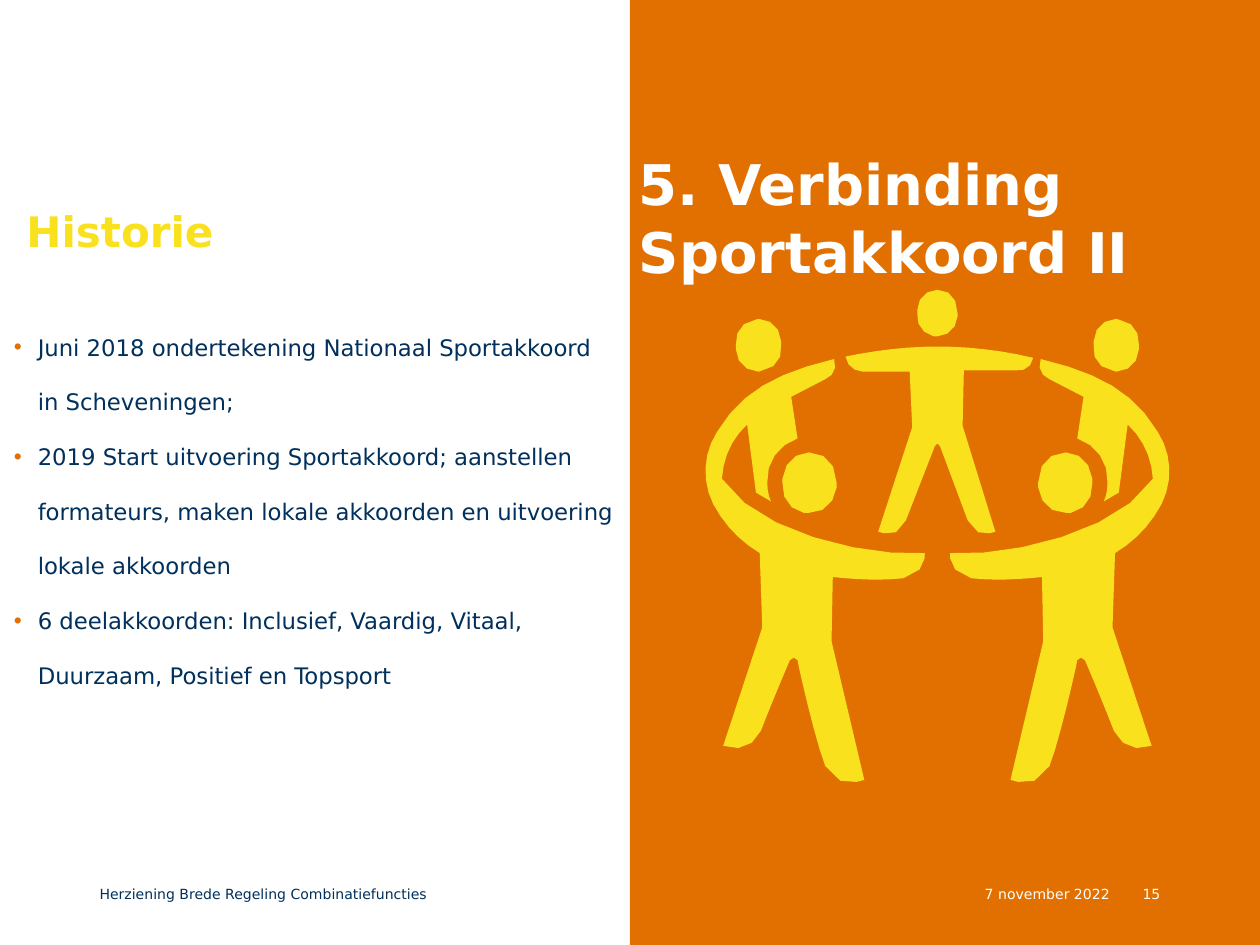
import math

from lxml import etree
from pptx import Presentation
from pptx.dml.color import RGBColor
from pptx.enum import shapes, text
from pptx.oxml.ns import qn
from pptx.util import Inches, Pt

FONT = "DejaVu Sans"
ORANGE, YELLOW, NAVY, WHITE = "E17000", "F9E11E", "00305B", "FFFFFF"
LEFT, RIGHT = text.PP_ALIGN.LEFT, text.PP_ALIGN.RIGHT

TITLE = "Historie"
HEADING = "5. Verbinding Sportakkoord II"
BULLETS = [
    "Juni 2018 ondertekening Nationaal Sportakkoord in Scheveningen;",
    "2019 Start uitvoering Sportakkoord; aanstellen formateurs, maken lokale "
    "akkoorden en uitvoering lokale akkoorden",
    "6 deelakkoorden: Inclusief, Vaardig, Vitaal, Duurzaam, Positief en Topsport",
]
FOOTERS = [  # text, left, width, colour, alignment
    ("Herziening Brede Regeling Combinatiefuncties", 0.79, 4.13, NAVY, LEFT),
    ("7 november 2022", 7.24, 1.57, WHITE, RIGHT),
    ("15", 8.82, 0.39, WHITE, RIGHT),
]

# Outlines in inches: a pair is a line end, six numbers are a Bézier curve
AXIS = 7.44
CENTRE_FIGURE = [
    [  # head
        (7.44, 2.67), (7.52, 2.67, 7.6, 2.6, 7.6, 2.51), (7.6, 2.49),
        (7.6, 2.37, 7.54, 2.3, 7.44, 2.3), (7.35, 2.3, 7.28, 2.37, 7.28, 2.46),
        (7.28, 2.49), (7.27, 2.57, 7.32, 2.65, 7.41, 2.67),
    ],
    [  # body
        (7.9, 4.22), (7.64, 3.38), (7.65, 2.94), (8.06, 2.94),
        (8.13, 2.95, 8.19, 2.91, 8.2, 2.84),
        (7.95, 2.78, 7.69, 2.75, 7.44, 2.75), (7.2, 2.75, 6.95, 2.78, 6.71, 2.83),
        (6.72, 2.9, 6.78, 2.95, 6.85, 2.95), (7.22, 2.95),
        (7.24, 3.39), (6.97, 4.22), (6.97, 4.22, 7.14, 4.29, 7.19, 4.13),
        (7.42, 3.54), (7.44, 3.52), (7.46, 3.54), (7.68, 4.13),
        (7.74, 4.29, 7.9, 4.22, 7.9, 4.22),
    ],
]
LEFT_FIGURES = [
    [  # front head
        (6.42, 3.59), (6.31, 3.59, 6.22, 3.68, 6.21, 3.8), (6.21, 3.83),
        (6.2, 3.95, 6.27, 4.05, 6.38, 4.07), (6.42, 4.07),
        (6.54, 4.08, 6.63, 3.98, 6.64, 3.87), (6.64, 3.83),
        (6.64, 3.68, 6.55, 3.59, 6.42, 3.59),
    ],
    [  # back head
        (6.05, 2.94), (6.15, 2.93, 6.22, 2.84, 6.2, 2.73), (6.2, 2.71),
        (6.2, 2.61, 6.12, 2.53, 6.02, 2.53), (5.99, 2.54),
        (5.89, 2.55, 5.83, 2.64, 5.84, 2.74), (5.84, 2.77),
        (5.84, 2.87, 5.92, 2.95, 6.02, 2.95),
    ],
    [  # joined bodies
        (5.73, 3.8), (5.74, 3.63, 5.81, 3.48, 5.93, 3.37), (6, 3.91), (6.12, 3.98),
        (6.1, 3.94, 6.09, 3.89, 6.09, 3.83), (6.08, 3.67, 6.18, 3.53, 6.33, 3.48),
        (6.28, 3.15), (6.55, 3.01), (6.61, 2.99, 6.65, 2.92, 6.62, 2.85),
        (6.16, 2.96, 5.88, 3.11, 5.69, 3.43), (5.58, 3.6, 5.57, 3.82, 5.66, 4),
        (5.75, 4.17, 5.88, 4.3, 6.03, 4.39), (6.05, 4.98), (5.74, 5.92),
        (5.86, 5.97, 5.99, 5.92, 6.04, 5.8), (6.12, 5.59, 6.26, 5.26, 6.27, 5.24),
        (6.3, 5.22), (6.33, 5.24), (6.33, 5.26, 6.47, 5.88, 6.55, 6.08),
        (6.64, 6.28, 6.86, 6.19, 6.86, 6.19), (6.6, 5.09), (6.61, 4.58),
        (6.8, 4.6, 6.98, 4.61, 7.17, 4.59), (7.36, 4.55, 7.34, 4.39, 7.34, 4.39),
        (6.86, 4.42, 6, 4.22, 5.73, 3.8),
    ],
]


def rgb(colour):
    return RGBColor.from_string(colour)


def paint(sp, colour):
    sp.fill.solid()
    sp.fill.fore_color.rgb = rgb(colour)
    sp.line.fill.background()
    sp.shadow.inherit = False


def flatten(outline):
    """Turn lines and cubic curves into points, with more on longer curves."""
    points = [outline[0]]
    for seg in outline[1:]:
        if len(seg) == 2:
            points.append(seg)
            continue
        ctrl = [points[-1], seg[:2], seg[2:4], seg[4:]]
        steps = min(6, max(3, round(math.dist(ctrl[0], ctrl[3]) / 0.1)))
        for i in range(1, steps + 1):
            t = i / steps
            weights = ((1 - t) ** 3, 3 * t * (1 - t) ** 2, 3 * t * t * (1 - t), t ** 3)
            points.append(tuple(sum(w * c[k] for w, c in zip(weights, ctrl))
                                for k in (0, 1)))
    return points


def draw(s, points):
    emu = [(Inches(x), Inches(y)) for x, y in points]
    builder = s.shapes.build_freeform(*emu[0])
    builder.add_line_segments(emu[1:], close=True)
    paint(builder.convert_to_shape(), YELLOW)


def place(sp, box, anchor=text.MSO_ANCHOR.TOP):
    sp.left, sp.top, sp.width, sp.height = map(Inches, box)
    tf = sp.text_frame
    tf.word_wrap = True
    tf.auto_size = text.MSO_AUTO_SIZE.NONE
    tf.vertical_anchor = anchor
    tf.margin_left = tf.margin_top = tf.margin_right = tf.margin_bottom = 0
    return tf


def write(p, words, size, colour, bold=False, align=LEFT, spacing=1.0):
    p.alignment = align
    p.line_spacing = spacing
    p.space_before = Pt(0)
    r = p.add_run()
    r.text = words
    r.font.name, r.font.size, r.font.bold = FONT, Pt(size), bold
    r.font.color.rgb = rgb(colour)


def set_bullet(p, indent=0, colour=None):
    """Hang a coloured bullet, or switch bullets off without a colour."""
    pPr = p._p.get_or_add_pPr()
    pPr.set("marL", str(Inches(indent)))
    pPr.set("indent", str(-Inches(indent)))
    if colour is None:
        etree.SubElement(pPr, qn("a:buNone"))
        return
    clr = etree.SubElement(pPr, qn("a:buClr"))
    etree.SubElement(clr, qn("a:srgbClr"), val=colour)
    etree.SubElement(pPr, qn("a:buChar"), char="•")


prs = Presentation()
prs.slide_width, prs.slide_height = Inches(10), Inches(7.5)
s = prs.slides.add_slide(prs.slide_layouts[3])
title, body, heading = s.placeholders

panel = s.shapes.add_shape(shapes.MSO_SHAPE.RECTANGLE, Inches(5), 0,
                           Inches(5), prs.slide_height)
paint(panel, ORANGE)
s.shapes.element.insert(2, panel.element)  # behind the placeholders

tf = place(title, (0.21, 1.09, 3.39, 0.94), text.MSO_ANCHOR.BOTTOM)
write(tf.paragraphs[0], TITLE, 24, YELLOW, bold=True)

tf = place(body, (0.11, 2.43, 4.79, 3.23))
for i, words in enumerate(BULLETS):
    p = tf.add_paragraph() if i else tf.paragraphs[0]
    set_bullet(p, 0.19, ORANGE)
    write(p, words, 13, NAVY, spacing=2.0)

tf = place(heading, (5.07, 1.19, 4.93, 1.28))
set_bullet(tf.paragraphs[0])
write(tf.paragraphs[0], HEADING, 32, WHITE, bold=True)

for outline in CENTRE_FIGURE:
    draw(s, flatten(outline))
for outline in LEFT_FIGURES:
    points = flatten(outline)
    draw(s, points)
    draw(s, [(2 * AXIS - x, y) for x, y in points])

for words, left, width, colour, align in FOOTERS:
    tf = place(s.shapes.add_textbox(0, 0, 0, 0), (left, 7.03, width, 0.26))
    write(tf.paragraphs[0], words, 8, colour, align=align)

prs.save("out.pptx")
